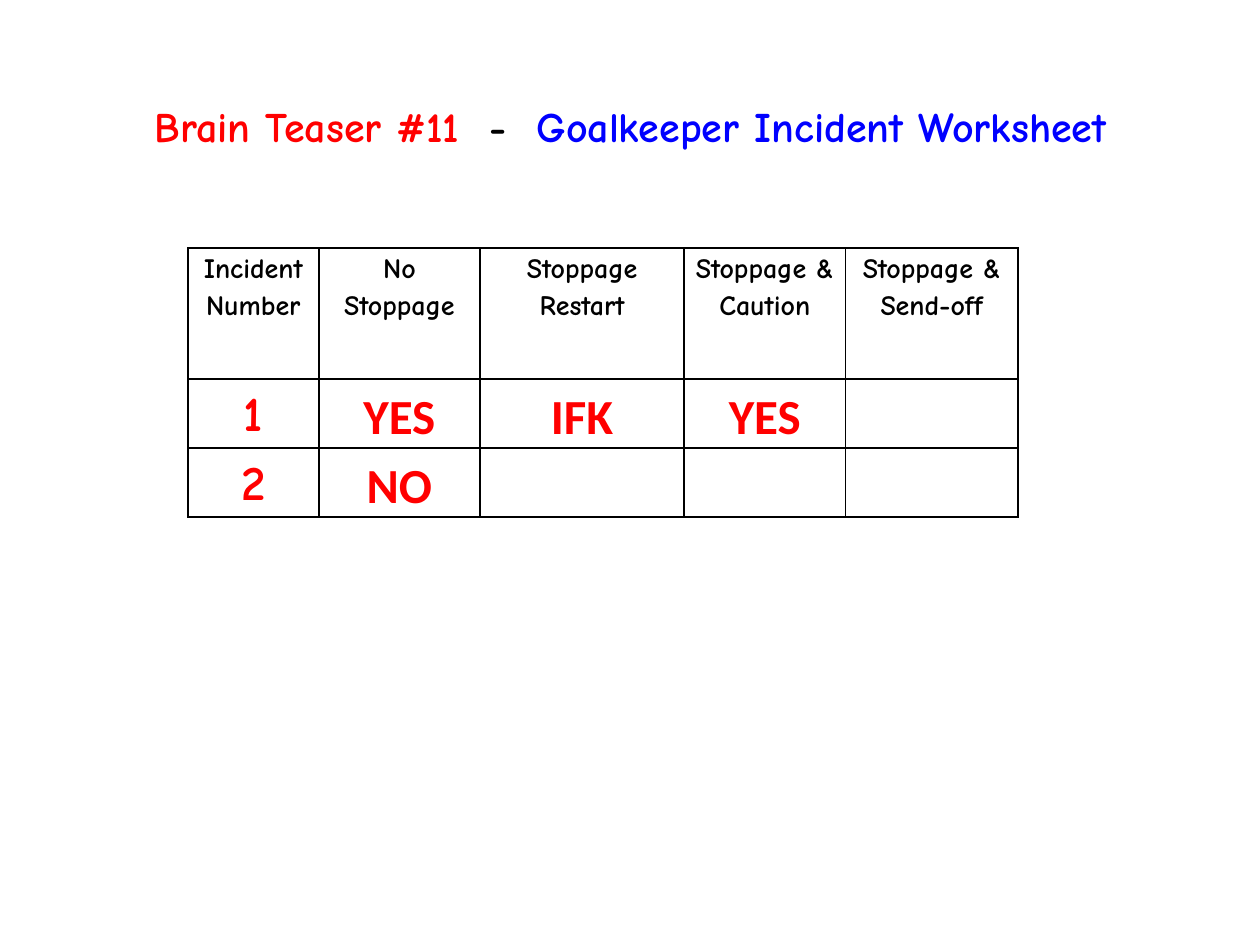
import pptx
import pptx.util
import pptx.dml.color
import pptx.enum.text
import pptx.oxml
import pptx.oxml.ns
from pptx.util import Inches

COLORS = {"black": "000000", "red": "FF0000", "blue": "0000FF"}
HEADING_FONT = "Comic Neue"
ANSWER_FONT = "Calibri"


def style_font(font, name, size, color):
    font.name = name
    font.size = pptx.util.Pt(size)
    font.bold = True
    font.color.rgb = pptx.dml.color.RGBColor.from_string(COLORS[color])


def add_borders(cell):
    properties = cell._tc.get_or_add_tcPr()
    for position, side in enumerate(("lnL", "lnR", "lnT", "lnB")):
        border = pptx.oxml.parse_xml(
            f'<a:{side} {pptx.oxml.ns.nsdecls("a")} w="12700"><a:solidFill>'
            f'<a:srgbClr val="{COLORS["black"]}"/></a:solidFill></a:{side}>'
        )
        properties.insert(position, border)


presentation = pptx.Presentation()
presentation.slide_width = Inches(10)
presentation.slide_height = Inches(7.5)
slide = presentation.slides.add_slide(presentation.slide_layouts[6])

rows = [
    ["Incident Number", "No Stoppage", "Stoppage Restart", "Stoppage & Caution", "Stoppage & Send-off"],
    ["1", "YES", "IFK", "YES", ""],
    ["2", "NO", "", "", ""],
]
column_widths = [1.04, 1.28, 1.62, 1.28, 1.37]
row_heights = [1.04, 0.52, 0.52]

table = slide.shapes.add_table(
    len(rows), len(column_widths), Inches(1.49), Inches(1.97),
    Inches(sum(column_widths)), Inches(sum(row_heights)),
).table
table.first_row = False
table.horz_banding = False
for column, width in zip(table.columns, column_widths):
    column.width = Inches(width)
for row, height in zip(table.rows, row_heights):
    row.height = Inches(height)

for row_index, row_texts in enumerate(rows):
    for column_index, text in enumerate(row_texts):
        cell = table.cell(row_index, column_index)
        cell.fill.background()
        add_borders(cell)
        cell.margin_left = cell.margin_right = Inches(0.07)
        cell.margin_top = cell.margin_bottom = 0
        cell.text = text
        paragraph = cell.text_frame.paragraphs[0]
        paragraph.alignment = pptx.enum.text.PP_ALIGN.CENTER
        paragraph.line_spacing = 1.15
        paragraph.space_after = pptx.util.Pt(10)
        if row_index == 0:
            style_font(paragraph.font, HEADING_FONT, 16, "black")
        else:
            name = HEADING_FONT if column_index == 0 else ANSWER_FONT
            style_font(paragraph.font, name, 28, "red")

title = slide.shapes.add_textbox(Inches(0.45), Inches(0.75), Inches(9.11), Inches(0.5))
title_frame = title.text_frame
title_frame.word_wrap = False
title_frame.auto_size = pptx.enum.text.MSO_AUTO_SIZE.SHAPE_TO_FIT_TEXT
title_frame.vertical_anchor = pptx.enum.text.MSO_ANCHOR.MIDDLE
paragraph = title_frame.paragraphs[0]
paragraph.alignment = pptx.enum.text.PP_ALIGN.CENTER
for text, color in [
    ("Brain Teaser #11  ", "red"),
    ("-  ", "black"),
    ("Goalkeeper Incident Worksheet", "blue"),
]:
    run = paragraph.add_run()
    run.text = text
    style_font(run.font, HEADING_FONT, 24, color)

presentation.save("out.pptx")
